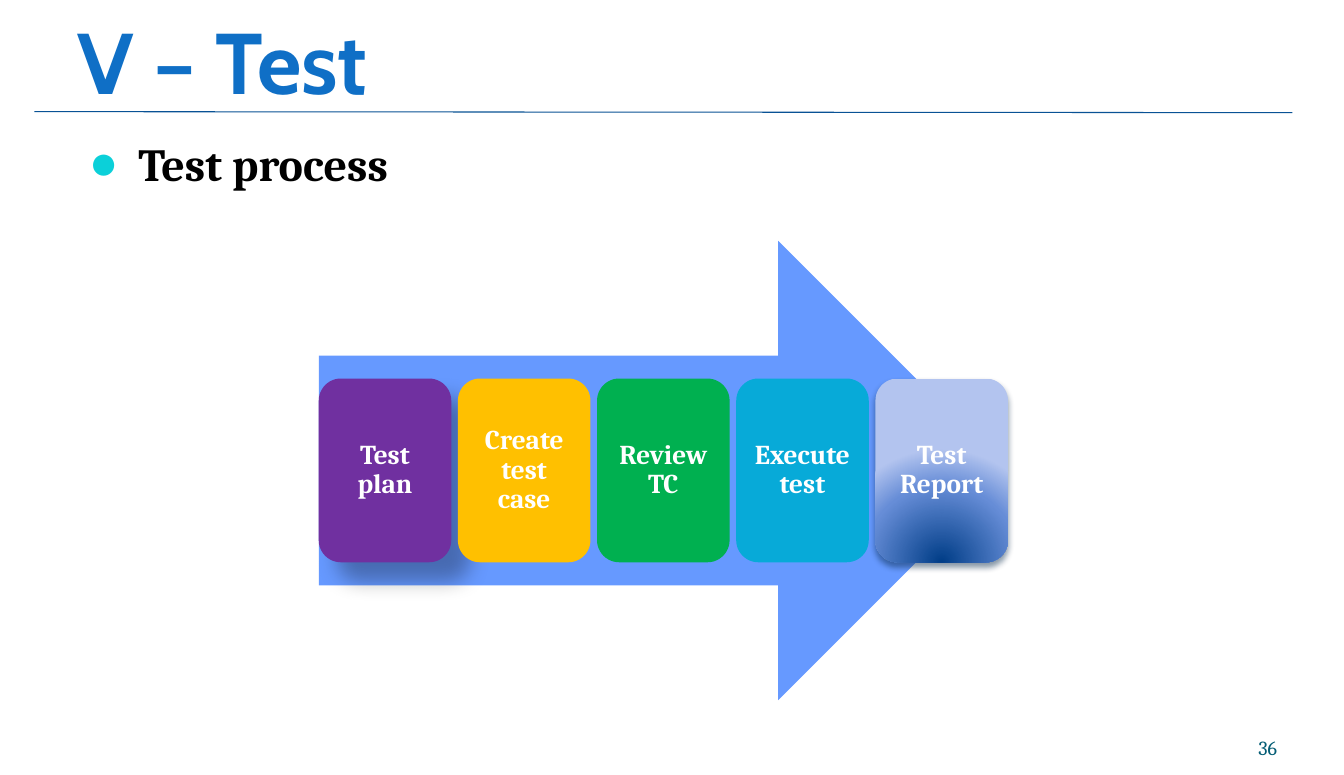
from lxml import etree
from pptx import Presentation
from pptx.dml.color import RGBColor
from pptx.enum.shapes import MSO_CONNECTOR as CONNECTOR, MSO_SHAPE as SHAPE
from pptx.enum.text import MSO_ANCHOR as ANCHOR, PP_ALIGN as ALIGN
from pptx.oxml import parse_xml
from pptx.oxml.ns import nsdecls, qn
from pptx.util import Pt

COLORS = {
    "title": "0F6FC6", "text": "000000", "bullet": "0BD0D9",
    "number": "045D75", "rule": "095295", "arrow": "6699FF",
    "white": "FFFFFF", "purple": "7030A0", "amber": "FFC000",
    "green": "00B050", "cyan": "07AAD8", "navy": "003D87",
    "mid_blue": "668DD7", "pale_blue": "B3C4EF", "dark_shadow": "042747",
}
# Label and fill of each step
STEPS = [
    ("Test plan", "purple"), ("Create test case", "amber"),
    ("Review TC", "green"), ("Execute test", "cyan"),
    ("Test Report", "pale_blue"),
]
# Shadow by step: colour, opacity %, blur, distance, angle
SHADOWS = {
    "Test plan": ("text", 30, 15, 18, 45),
    "Test Report": ("dark_shadow", 48, 4.5, 3, 90),
}
REPORT_STOPS = [(0, "navy"), (68, "mid_blue"), (100, "pale_blue")]


def rgb(name):
    return RGBColor.from_string(COLORS[name])


def set_frame(shape, insets, anchor):
    frame = shape.text_frame
    frame.word_wrap = True
    frame.vertical_anchor = anchor
    (frame.margin_left, frame.margin_top,
     frame.margin_right, frame.margin_bottom) = [Pt(inset) for inset in insets]
    return frame.paragraphs[0]


def add_run(paragraph, text, font, size, color, bold=False):
    run = paragraph.add_run()
    run.text = text
    run.font.name = font
    run.font.size = Pt(size)
    run.font.bold = bold
    run.font.color.rgb = rgb(color)


def add_text_box(slide, box, insets=(0, 0, 0, 0), anchor=ANCHOR.TOP):
    shape = slide.shapes.add_textbox(*[Pt(length) for length in box])
    return set_frame(shape, insets, anchor)


def add_solid_shape(slide, kind, box, color):
    shape = slide.shapes.add_shape(kind, *[Pt(length) for length in box])
    shape.shadow.inherit = False
    shape.fill.solid()
    shape.fill.fore_color.rgb = rgb(color)
    shape.line.fill.background()
    return shape


def add_shadow(shape, color, opacity, blur, distance, angle):
    effects = shape._element.spPr.find(qn("a:effectLst"))
    effects.append(parse_xml(
        f'<a:outerShdw {nsdecls("a")} blurRad="{Pt(blur)}" dist="{Pt(distance)}" '
        f'dir="{angle * 60000}" algn="ctr" rotWithShape="0">'
        f'<a:srgbClr val="{COLORS[color]}"><a:alpha val="{opacity * 1000}"/>'
        '</a:srgbClr></a:outerShdw>'))


def set_radial_fill(shape, stops):
    stop_xml = "".join(
        f'<a:gs pos="{position * 1000}"><a:srgbClr val="{COLORS[color]}"/></a:gs>'
        for position, color in stops)
    properties = shape._element.spPr
    solid = properties.find(qn("a:solidFill"))
    properties.replace(solid, parse_xml(
        f'<a:gradFill {nsdecls("a")} rotWithShape="1"><a:gsLst>{stop_xml}</a:gsLst>'
        '<a:path path="circle"><a:fillToRect l="50000" t="130000" r="50000" '
        'b="-30000"/></a:path></a:gradFill>'))


def add_title(slide, box):
    paragraph = add_text_box(slide, box, (0, 4.3, 0, 0), ANCHOR.BOTTOM)
    add_run(paragraph, "V – Test", "Cabin", 60, "title", bold=True)


def add_rule(slide, box):
    left, top, width, height = box
    rule = slide.shapes.add_connector(
        CONNECTOR.STRAIGHT, Pt(left), Pt(top), Pt(left + width), Pt(top + height))
    rule.line.color.rgb = rgb("rule")
    rule.line.width = Pt(0.75)
    etree.SubElement(rule._element.spPr, qn("a:effectLst"))


def add_body(slide, box):
    paragraph = add_text_box(slide, box, (7.9, 4.3, 7.9, 4.3))
    properties = paragraph._p.get_or_add_pPr()
    properties.set("marL", str(Pt(34.5)))
    properties.set("indent", str(Pt(-34.5)))
    for bullet in (
            f'<a:buClr {nsdecls("a")}><a:srgbClr val="{COLORS["bullet"]}"/></a:buClr>',
            f'<a:buSzPct {nsdecls("a")} val="107000"/>',
            f'<a:buFont {nsdecls("a")} typeface="Arial"/>',
            f'<a:buChar {nsdecls("a")} char="●"/>'):
        properties.append(parse_xml(bullet))
    add_run(paragraph, "Test process", "Cambria", 32, "text", bold=True)


def add_process(slide, box):
    left, top, width, height = box
    add_solid_shape(slide, SHAPE.RIGHT_ARROW, box, "arrow")

    # Cards span the arrow, with gaps of a twentieth of a card
    count = len(STEPS)
    card_width = width / (count + 0.05 * (count - 1))
    card_height = 0.4 * height
    card_top = top + 0.3 * height
    for index, (label, color) in enumerate(STEPS):
        card_left = left + index * 1.05 * card_width
        card = add_solid_shape(
            slide, SHAPE.ROUNDED_RECTANGLE,
            (card_left, card_top, card_width, card_height), color)
        if label == "Test Report":
            set_radial_fill(card, REPORT_STOPS)
        if label in SHADOWS:
            add_shadow(card, *SHADOWS[label])
        paragraph = set_frame(card, (5.7, 5.7, 5.7, 5.7), ANCHOR.MIDDLE)
        paragraph.alignment = ALIGN.CENTER
        paragraph.line_spacing = 0.9
        add_run(paragraph, label, "Cambria", 19, "white", bold=True)


def add_slide_number(slide, box):
    paragraph = add_text_box(slide, box, anchor=ANCHOR.BOTTOM)
    paragraph.alignment = ALIGN.RIGHT
    add_run(paragraph, "36", "Cambria", 14, "number")


def main():
    presentation = Presentation()
    presentation.slide_width = Pt(936)
    presentation.slide_height = Pt(540)
    slide = presentation.slides.add_slide(presentation.slide_layouts[6])
    add_title(slide, (54, -12, 842, 90))
    add_rule(slide, (24, 77.8, 876, 0.7))
    add_body(slide, (54, 90, 842, 345.6))
    add_process(slide, (222, 167.8, 480, 320))
    add_slide_number(slide, (811.4, 500.4, 78, 28.8))
    presentation.save("out.pptx")


if __name__ == "__main__":
    main()
